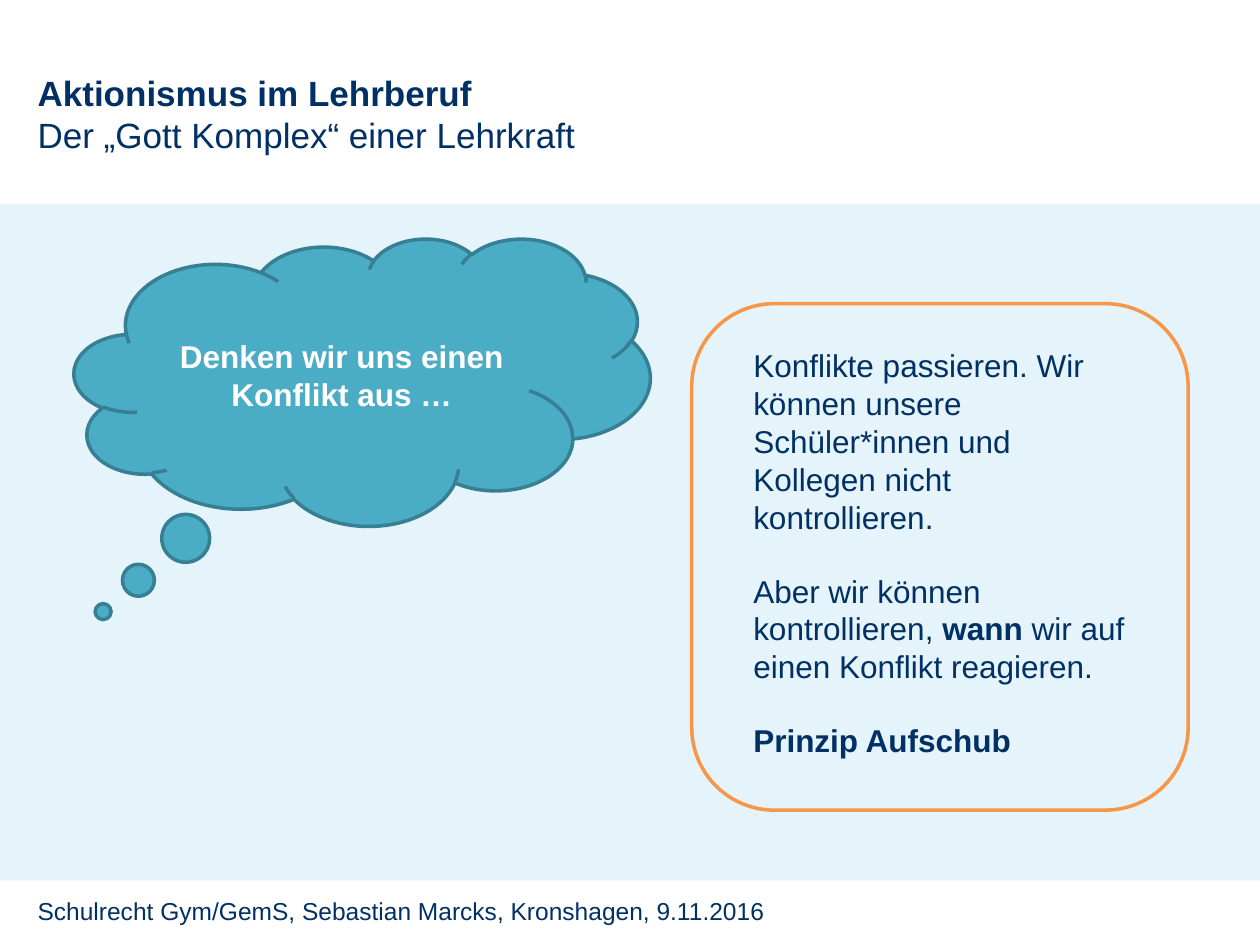
from dataclasses import dataclass

from lxml.etree import SubElement
from pptx import Presentation
from pptx.dml.color import RGBColor
from pptx.enum.shapes import MSO_SHAPE
from pptx.enum.text import MSO_ANCHOR, PP_ALIGN
from pptx.oxml.ns import qn
from pptx.util import Inches, Pt

COLUMNS, ROWS = 100, 75


@dataclass(frozen=True)
class Theme:
    font: str = "Arial"
    navy: str = "003064"
    blue: str = "008CCF"
    teal: str = "4BACC6"
    dark_teal: str = "377F92"
    orange: str = "F79646"
    white: str = "FFFFFF"
    title_size: int = 20
    body_size: int = 18
    footer_size: int = 14
    line_width: int = 2
    paragraph_gap: float = 20.7  # one line of body text


class SlideBuilder:
    def __init__(self, deck, theme):
        self.deck = deck
        self.theme = theme
        self.slide = deck.slides.add_slide(deck.slide_layouts[6])

    def place(self, left, top, width, height):
        """Turn grid columns and rows into slide lengths."""
        column = self.deck.slide_width / COLUMNS
        row = self.deck.slide_height / ROWS
        return [round(n) for n in (left * column, top * row, width * column, height * row)]

    def shape(self, kind, area, fill=None, line=None, opacity=None, adjustments=()):
        shape = self.slide.shapes.add_shape(kind, *self.place(*area))
        shape.shadow.inherit = False
        for index, value in enumerate(adjustments):
            shape.adjustments[index] = value
        if fill:
            shape.fill.solid()
            shape.fill.fore_color.rgb = RGBColor.from_string(fill)
        else:
            shape.fill.background()
        if opacity:
            color = shape.element.spPr.find(qn("a:solidFill"))[0]
            SubElement(color, qn("a:alpha"), val=str(opacity * 1000))
        if line:
            shape.line.color.rgb = RGBColor.from_string(line)
            shape.line.width = Pt(self.theme.line_width)
        else:
            shape.line.fill.background()
        return shape

    def add_paragraphs(self, box, paragraphs, size, color, align=PP_ALIGN.LEFT, gap=0):
        """Fill a box; each paragraph is a list of (text, bold) spans."""
        frame = box.text_frame
        frame.word_wrap = True
        font_format = {"name": self.theme.font, "size": Pt(size)}
        for index, spans in enumerate(paragraphs):
            para = frame.add_paragraph() if index else frame.paragraphs[0]
            para.alignment = align
            para.space_before = Pt(gap if index else 0)
            for text, bold in spans:
                span = para.add_run()
                span.text = text
                for name, value in {**font_format, "bold": bold}.items():
                    setattr(span.font, name, value)
                span.font.color.rgb = RGBColor.from_string(color)

    def text(self, area, paragraphs, size, gap=0):
        box = self.slide.shapes.add_textbox(*self.place(*area))
        self.add_paragraphs(box, paragraphs, size, self.theme.navy, gap=gap)

    def thought(self, area, text, tail):
        cloud = self.shape(MSO_SHAPE.CLOUD_CALLOUT, area, self.theme.teal,
                           self.theme.dark_teal, adjustments=tail)
        cloud.text_frame.vertical_anchor = MSO_ANCHOR.MIDDLE
        self.add_paragraphs(cloud, [[(text, True)]], self.theme.body_size,
                            self.theme.white, PP_ALIGN.CENTER)


def main():
    theme = Theme()
    deck = Presentation()
    deck.slide_width, deck.slide_height = Inches(10), Inches(7.5)
    builder = SlideBuilder(deck, theme)

    builder.shape(MSO_SHAPE.RECTANGLE, (0, 16.2, COLUMNS, 53.7), theme.blue, opacity=10)
    builder.text((2, 70.6, 85.8, 4.2),
                 [[("Schulrecht Gym/GemS, Sebastian Marcks, Kronshagen, 9.11.2016", False)]],
                 theme.footer_size)
    builder.text((2, 5.2, 63.8, 7.7),
                 [[("Aktionismus im Lehrberuf", True)],
                  [("Der „Gott Komplex“ einer Lehrkraft", False)]],
                 theme.title_size)
    builder.thought((5.9, 18.9, 45.7, 22.8), "Denken wir uns einen Konflikt aus …",
                    tail=(-0.45, 0.8))
    builder.shape(MSO_SHAPE.ROUNDED_RECTANGLE, (54.9, 24.1, 39.4, 40.2), line=theme.orange)
    builder.text((58.8, 27, 31.5, 34.3),
                 [[("Konflikte passieren. Wir können unsere Schüler*innen und "
                    "Kollegen nicht kontrollieren.", False)],
                  [("Aber wir können kontrollieren, ", False), ("wann", True),
                   (" wir auf einen Konflikt reagieren.", False)],
                  [("Prinzip Aufschub", True)]],
                 theme.body_size, gap=theme.paragraph_gap)
    deck.save("out.pptx")


if __name__ == "__main__":
    main()
